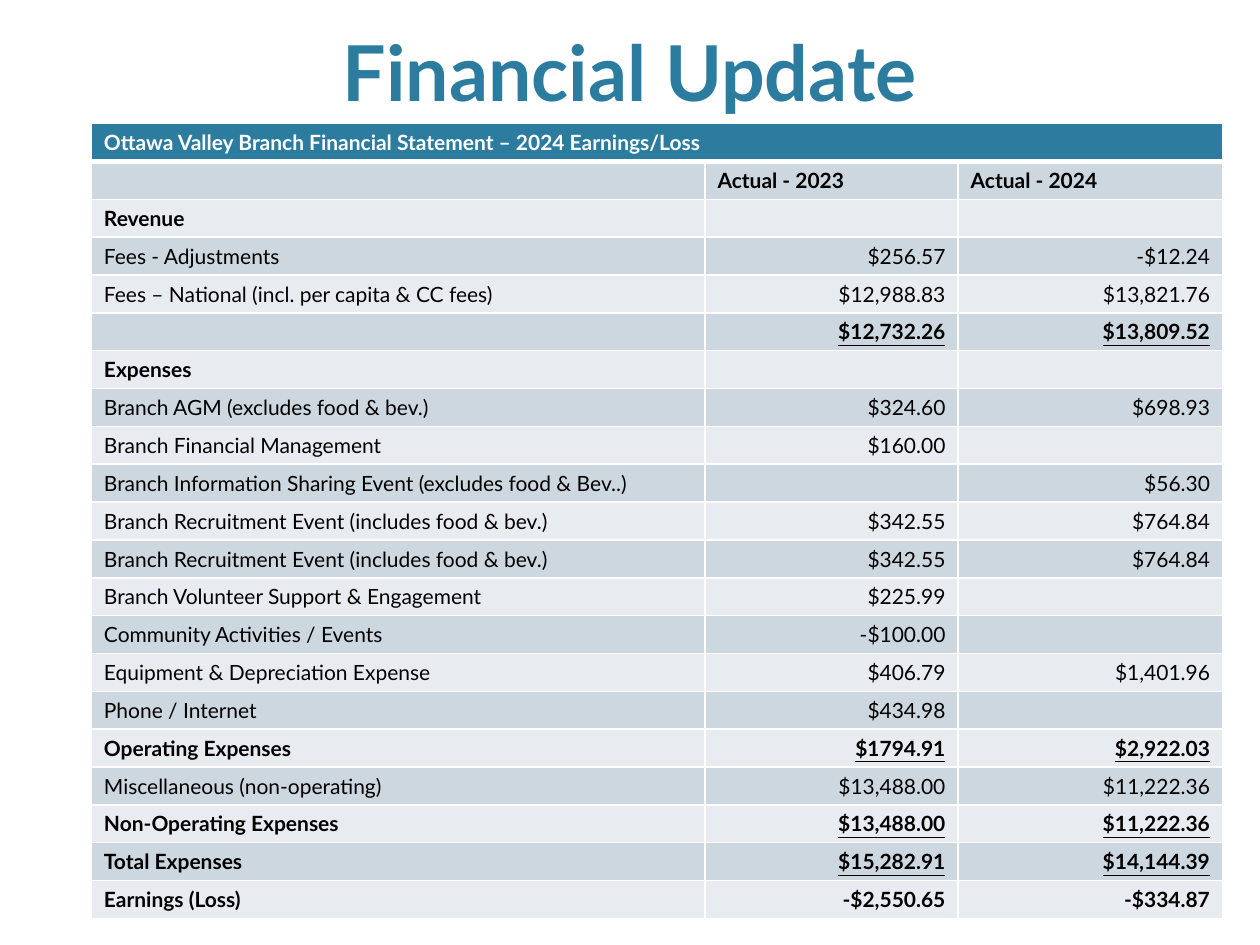
from lxml import etree
from pptx import Presentation
from pptx.dml.color import RGBColor
from pptx.enum.text import MSO_ANCHOR, PP_ALIGN
from pptx.oxml.ns import qn
from pptx.util import Pt

LEFT, CENTER, RIGHT = PP_ALIGN.LEFT, PP_ALIGN.CENTER, PP_ALIGN.RIGHT
BOTTOM = MSO_ANCHOR.BOTTOM

TEAL = RGBColor(0x2C, 0x7C, 0x9F)
WHITE = RGBColor(0xFF, 0xFF, 0xFF)
BLACK = RGBColor(0x00, 0x00, 0x00)
BAND_DARK = RGBColor(0xCD, 0xD7, 0xDF)
BAND_LIGHT = RGBColor(0xE8, 0xEC, 0xF0)

FONT = "Lato"
PLAIN = {"bold": False, "underline": False}
BOLD = {"bold": True, "underline": False}
TOTAL = {"bold": True, "underline": True}

COL_WIDTHS = (350.6, 144.7, 151.2)
HEADER = "Ottawa Valley Branch Financial Statement – 2024 Earnings/Loss"
ROWS = [
    ("", "Actual - 2023", "Actual - 2024", BOLD),
    ("Revenue", "", "", BOLD),
    ("Fees - Adjustments", "$256.57", "-$12.24", PLAIN),
    ("Fees – National (incl. per capita & CC fees)", "$12,988.83", "$13,821.76", PLAIN),
    ("", "$12,732.26", "$13,809.52", TOTAL),
    ("Expenses", "", "", BOLD),
    ("Branch AGM (excludes food & bev.)", "$324.60", "$698.93", PLAIN),
    ("Branch Financial Management", "$160.00", "", PLAIN),
    ("Branch Information Sharing Event (excludes food & Bev..)", "", "$56.30", PLAIN),
    ("Branch Recruitment Event (includes food & bev.)", "$342.55", "$764.84", PLAIN),
    ("Branch Recruitment Event (includes food & bev.)", "$342.55", "$764.84", PLAIN),
    ("Branch Volunteer Support & Engagement", "$225.99", "", PLAIN),
    ("Community Activities / Events", "-$100.00", "", PLAIN),
    ("Equipment & Depreciation Expense", "$406.79", "$1,401.96", PLAIN),
    ("Phone / Internet", "$434.98", "", PLAIN),
    ("Operating Expenses", "$1794.91", "$2,922.03", TOTAL),
    ("Miscellaneous (non-operating)", "$13,488.00", "$11,222.36", PLAIN),
    ("Non-Operating Expenses", "$13,488.00", "$11,222.36", TOTAL),
    ("Total Expenses", "$15,282.91", "$14,144.39", TOTAL),
    ("Earnings (Loss)", "-$2,550.65", "-$334.87", BOLD),
]


def write(p, text, size, color, align, style):
    p.alignment = align
    if not text:
        etree.SubElement(p._p, qn("a:endParaRPr"), sz=str(size * 100))
        return
    r = p.add_run()
    r.text = text
    for name, value in {"name": FONT, "size": Pt(size), **style}.items():
        setattr(r.font, name, value)
    r.font.color.rgb = color


def set_borders(cell, top, bottom):
    tcPr = cell._tc.get_or_add_tcPr()
    for side, width in {"L": 1, "R": 1, "T": top, "B": bottom}.items():
        ln = etree.SubElement(tcPr, qn(f"a:ln{side}"), w=str(Pt(width)))
        fill = etree.SubElement(ln, qn("a:solidFill"))
        etree.SubElement(fill, qn("a:srgbClr"), val=str(WHITE))


def set_cell(cell, color, top=1, bottom=1):
    set_borders(cell, top, bottom)
    cell.fill.solid()
    cell.fill.fore_color.rgb = color


def add_title(s, x, y, w, h):
    tf = s.shapes.add_textbox(Pt(x), Pt(y), Pt(w), Pt(h)).text_frame
    tf.word_wrap = True
    tf.vertical_anchor = BOTTOM
    write(tf.paragraphs[0], "Financial Update", 44, TEAL, CENTER, BOLD)


def add_statement(s, x, y, w, h):
    count = len(ROWS) + 1
    table = s.shapes.add_table(count, len(COL_WIDTHS), Pt(x), Pt(y), Pt(w), Pt(h)).table
    for col, width in zip(table.columns, COL_WIDTHS):
        col.width = Pt(w * width / sum(COL_WIDTHS))
    for row in table.rows:
        row.height = Pt(h / count)

    for cell in table.rows[0].cells:
        set_cell(cell, TEAL, bottom=3)
    header = table.cell(0, 0)
    header.merge(table.cell(0, len(COL_WIDTHS) - 1))
    write(header.text_frame.paragraphs[0], HEADER, 12, WHITE, LEFT, BOLD)

    for i, (*texts, style) in enumerate(ROWS, 1):
        for j, text in enumerate(texts):
            cell = table.cell(i, j)
            set_cell(cell, BAND_DARK if i % 2 else BAND_LIGHT, top=3 if i == 1 else 1)
            align = RIGHT if j and i > 1 else LEFT
            cell_style = style if j or style is PLAIN else BOLD
            write(cell.text_frame.paragraphs[0], text, 12, BLACK, align, cell_style)


def main():
    prs = Presentation()
    prs.slide_width, prs.slide_height = Pt(720), Pt(540)
    s = prs.slides.add_slide(prs.slide_layouts[6])
    add_title(s, 43.2, 8.6, 633.6, 61.9)
    add_statement(s, 52.2, 70.6, 646.5, 453.6)
    prs.save("out.pptx")


if __name__ == "__main__":
    main()
